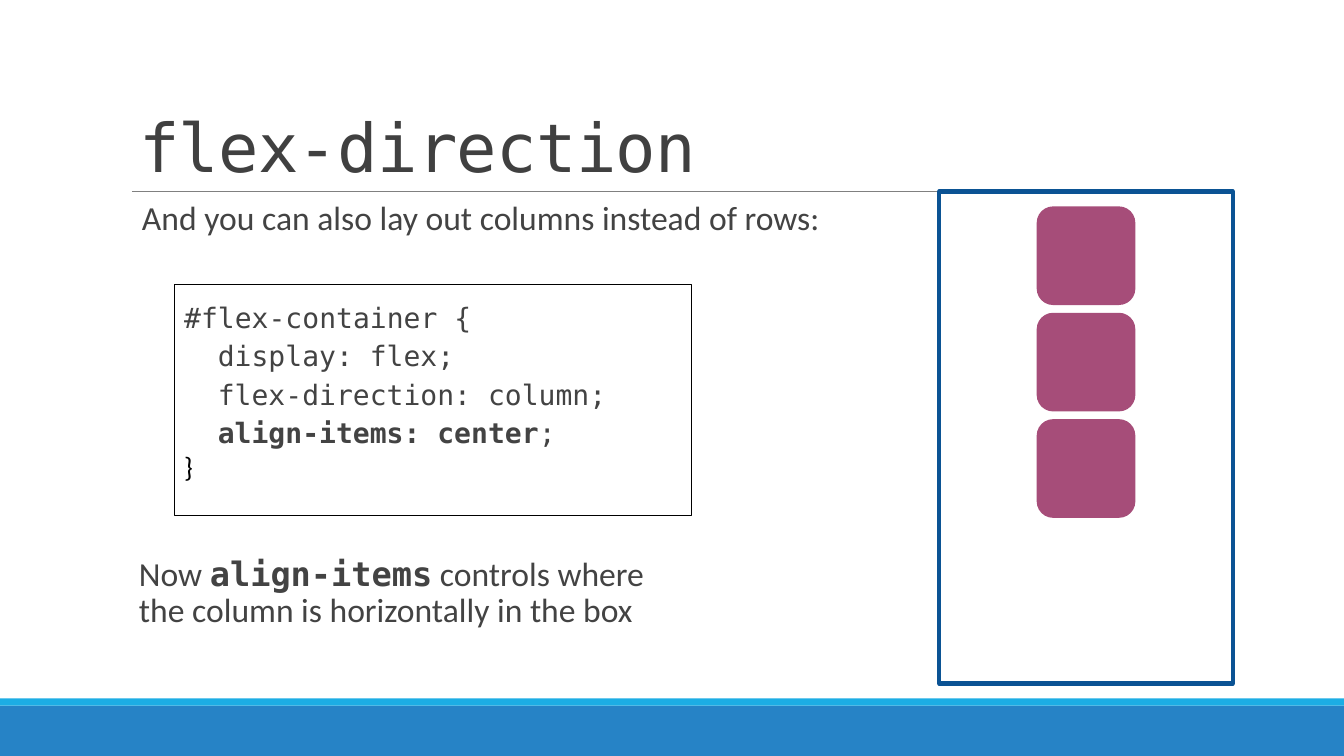
import pptx
import pptx.dml.color
import pptx.enum.shapes
import pptx.enum.text
import pptx.util
from lxml import etree

Pt = pptx.util.Pt
RGBColor = pptx.dml.color.RGBColor
MSO_SHAPE = pptx.enum.shapes.MSO_SHAPE

BLUE = RGBColor(0x26, 0x83, 0xC6)
CYAN = RGBColor(0x1C, 0xAD, 0xE4)
GRAY = RGBColor(0x80, 0x80, 0x80)
NAVY = RGBColor(0x0B, 0x53, 0x94)
PLUM = RGBColor(0xA6, 0x4D, 0x79)
WHITE = RGBColor(0xFF, 0xFF, 0xFF)
BLACK = RGBColor(0x00, 0x00, 0x00)
TITLE_GRAY = RGBColor(0x40, 0x40, 0x40)
TEXT_GRAY = RGBColor(0x43, 0x43, 0x43)

SANS = "Calibri"
MONO = "DejaVu Sans Mono"
INSET = 7.2
CODE_INDENT = 24.08  # two monospaced characters at 20 pt


def add_box(slide, kind, left, top, width, height, fill=None, line=None, weight=0):
    box = slide.shapes.add_shape(kind, Pt(left), Pt(top), Pt(width), Pt(height))
    box.shadow.inherit = False
    if fill is None:
        box.fill.background()
    else:
        box.fill.solid()
        box.fill.fore_color.rgb = fill
    if line is None:
        box.line.fill.background()
    else:
        box.line.color.rgb = line
        box.line.width = Pt(weight)
    return box


def add_rule(slide, left, right, y):
    rule = slide.shapes.add_connector(
        pptx.enum.shapes.MSO_CONNECTOR.STRAIGHT, Pt(left), Pt(y), Pt(right), Pt(y))
    rule.line.color.rgb = GRAY
    rule.line.width = Pt(0.5)
    etree.SubElement(rule.element.spPr, pptx.oxml.ns.qn("a:effectLst"))


def prepare_frame(shape):
    frame = shape.text_frame
    frame.word_wrap = True
    frame.vertical_anchor = pptx.enum.text.MSO_ANCHOR.TOP
    frame.margin_left = frame.margin_right = Pt(INSET)
    frame.margin_top = frame.margin_bottom = Pt(INSET)
    return frame


def add_run(paragraph, text, size, font=SANS, color=TEXT_GRAY, bold=False):
    run = paragraph.add_run()
    run.text = text
    run.font.name = font
    run.font.size = Pt(size)
    run.font.bold = bold
    run.font.color.rgb = color
    return run


def add_text(slide, left, top, width, height, spacing):
    box = slide.shapes.add_textbox(Pt(left), Pt(top), Pt(width), Pt(height))
    paragraph = prepare_frame(box).paragraphs[0]
    paragraph.line_spacing = spacing
    return paragraph


def add_code(slide, left, top, width, height):
    frame = prepare_frame(
        add_box(slide, MSO_SHAPE.RECTANGLE, left, top, width, height, line=BLACK, weight=0.75))
    # Each line: indent, then (text, bold) pieces
    code_lines = [
        (0, [("#flex-container {", False)]),
        (CODE_INDENT, [("display: flex;", False)]),
        (CODE_INDENT, [("flex-direction: column;", False)]),
        (CODE_INDENT, [("align-items: center", True), (";", False)]),
    ]
    code_line = frame.paragraphs[0]
    for indent, pieces in code_lines:
        code_line.alignment = pptx.enum.text.PP_ALIGN.LEFT
        code_line.line_spacing = 1.15
        code_line._p.get_or_add_pPr().set("marL", str(Pt(indent)))
        for text, bold in pieces:
            add_run(code_line, text, 20, MONO, bold=bold)
        code_line = frame.add_paragraph()
    code_line.alignment = pptx.enum.text.PP_ALIGN.LEFT
    add_run(code_line, "}", 20, color=BLACK)


def add_flex_column(slide, left, top, width, height):
    add_box(slide, MSO_SHAPE.RECTANGLE, left, top, width, height, WHITE, NAVY, 3)
    side, step, padding = 70.5, 76, 10.6
    for index in range(3):
        item = add_box(slide, MSO_SHAPE.ROUNDED_RECTANGLE, left + (width - side) / 2,
                       top + padding + index * step, side, side, PLUM)
        item.adjustments[0] = 0.167


def main():
    deck = pptx.Presentation()
    deck.slide_width, deck.slide_height = Pt(960), Pt(540)
    slide = deck.slides.add_slide(deck.slide_layouts[6])

    # Footer bands and title rule
    add_box(slide, MSO_SHAPE.RECTANGLE, 0, 504, 960, 36, BLUE)
    add_box(slide, MSO_SHAPE.RECTANGLE, 0, 498.8, 960, 5.2, CYAN)
    add_rule(slide, 94.3, 879.1, 136.8)

    # Column of items in the flex container
    add_flex_column(slide, 671, 136.8, 209.5, 351.4)

    # Code sample
    add_code(slide, 124.5, 203.5, 369.4, 165)

    # Introduction
    intro = add_text(slide, 94.3, 136.8, 597, 70.5, 0.9)
    add_run(intro, "And you can also lay out columns instead of rows:", 24)

    # Title
    title = add_text(slide, 92.2, 76.5, 597, 60, 0.85)
    heading = add_run(title, "flex-direction", 48, MONO, TITLE_GRAY)
    heading.font._element.set("spc", "-50")

    # Explanation
    explanation = add_text(slide, 92.2, 391, 384.5, 72, 0.9)
    add_run(explanation, "Now ", 24)
    add_run(explanation, "align-items", 24, MONO, bold=True)
    add_run(explanation, " controls where the column is horizontally in the box", 24)

    deck.save("out.pptx")


if __name__ == "__main__":
    main()
